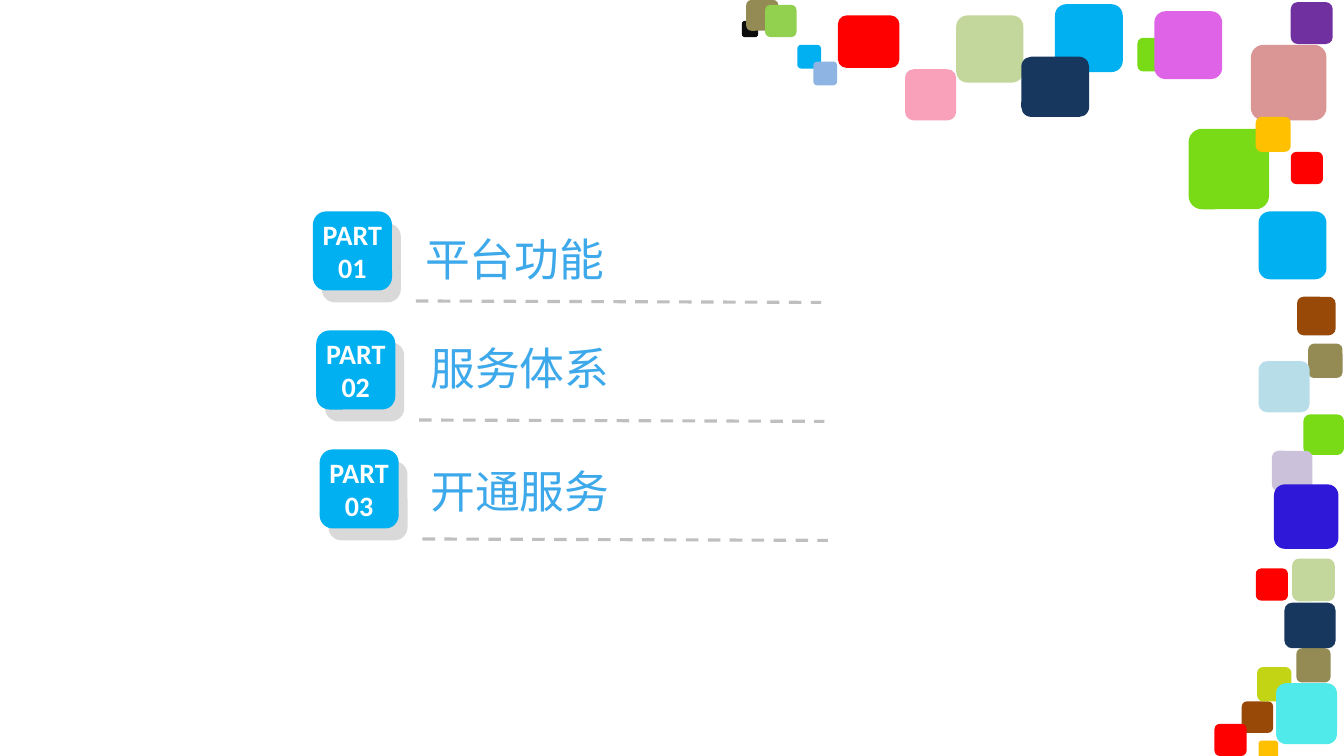
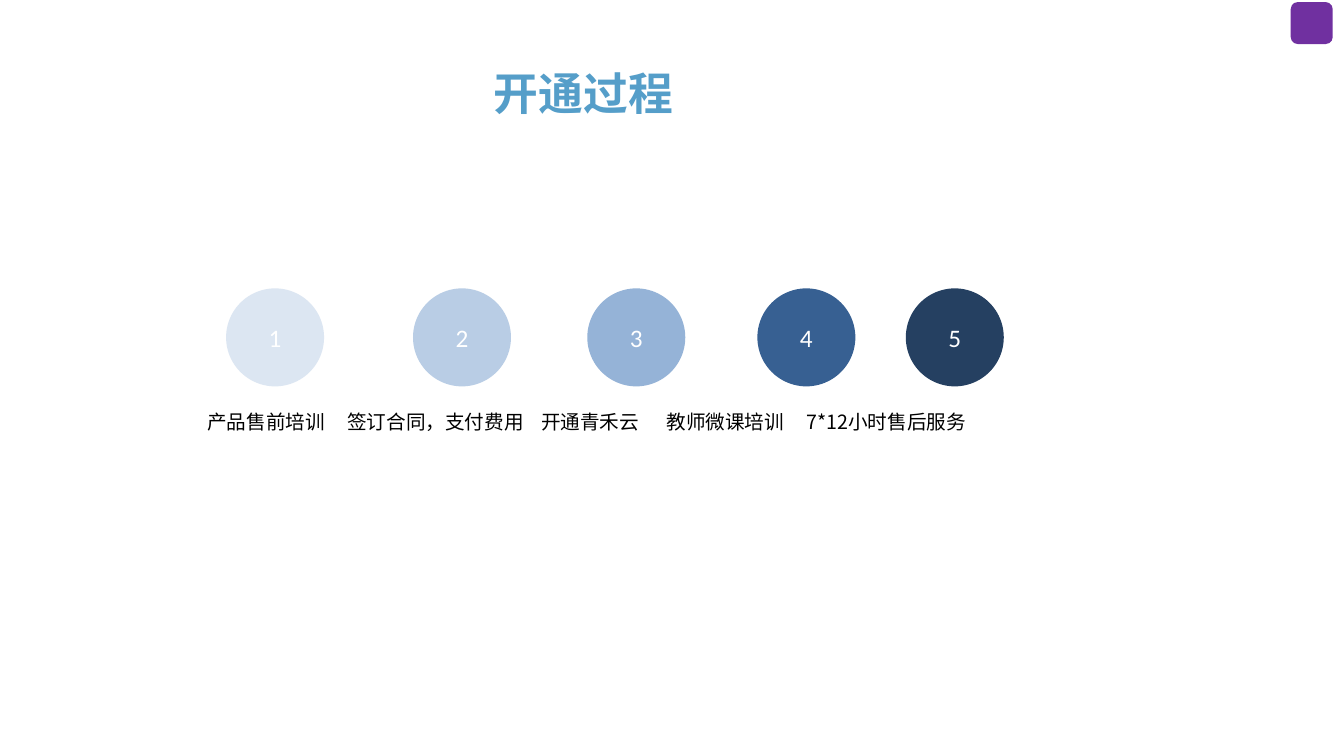
from lxml.etree import SubElement
from pptx import Presentation
from pptx.dml.color import RGBColor
from pptx.enum.dml import MSO_LINE
from pptx.enum.shapes import MSO_CONNECTOR, MSO_SHAPE
from pptx.enum.text import MSO_ANCHOR, MSO_AUTO_SIZE, PP_ALIGN
from pptx.oxml.ns import qn
from pptx.util import Pt

LATIN, HAN = "Calibri", "Noto Sans CJK SC"
COLORS = {
    "black": "000000", "ink": "0D0D0D", "white": "FFFFFF",
    "gray": "D9D9D9", "rule": "BFBFBF", "olive": "948A54",
    "sky": "00B0F0", "red": "FF0000", "mist": "8EB4E3",
    "sage": "C3D69B", "pink": "F9A1BA", "brown": "984807",
    "lime": "78DB15", "orchid": "DE63E7", "purple": "7030A0",
    "rose": "D99694", "green": "92D050", "navy": "17375E",
    "gold": "FFC000", "ice": "B7DEE8", "citron": "C2D414",
    "aqua": "50EAEA", "lilac": "CCC1DA", "blue": "2F18D8",
    "topic": "3DA9EB", "title": "559EC9",
    "step1": "DCE6F2", "step2": "B9CDE5", "step3": "95B3D7",
    "step4": "376092", "step5": "254061",
}


def add_tile(slide, left, top, width, height, color,
             kind=MSO_SHAPE.ROUNDED_RECTANGLE):
    tile = slide.shapes.add_shape(
        kind, Pt(left), Pt(top), Pt(width), Pt(height))
    tile.shadow.inherit = False
    tile.fill.solid()
    tile.fill.fore_color.rgb = RGBColor.from_string(COLORS[color])
    tile.line.fill.background()
    return tile


def set_text(frame, lines, face, size, color, bold=False,
             align=PP_ALIGN.LEFT, anchor=MSO_ANCHOR.TOP, inset=0):
    frame.text = "\n".join(lines)
    frame.auto_size = MSO_AUTO_SIZE.NONE
    frame.vertical_anchor = anchor
    frame.margin_left = frame.margin_right = Pt(inset)
    frame.margin_top = frame.margin_bottom = Pt(inset)
    for par in frame.paragraphs:
        par.alignment = align
        par.space_before = Pt(0)
        font = par.font
        font.name, font.size, font.bold = face, Pt(size), bold
        font.color.rgb = RGBColor.from_string(COLORS[color])
        props = par._p.get_or_add_pPr().get_or_add_defRPr()
        SubElement(props, qn("a:ea")).set("typeface", face)


deck = Presentation()
deck.slide_width, deck.slide_height = Pt(960), Pt(540)
agenda = deck.slides.add_slide(deck.slide_layouts[1])
process = deck.slides.add_slide(deck.slide_layouts[5])

# Shared corner tile
for slide in deck.slides:
    add_tile(slide, 922, 1.5, 30, 30, "purple")

# Agenda: mosaic border, from back to front
MOSAIC = [
    (530, 15, 11.5, 11.5, "ink"), (533, 0, 23, 22, "olive"),
    (569.5, 32, 17, 17, "sky"), (598.5, 11, 44, 37.5, "red"),
    (581, 44, 17, 17, "mist"), (683, 11, 48, 48, "sage"),
    (646.5, 49.5, 36.5, 36.5, "pink"), (926.5, 212, 27.5, 27.5, "brown"),
    (899, 151, 48.5, 48.5, "sky"), (753.5, 3, 48.5, 48.5, "sky"),
    (812.5, 27, 24, 24, "lime"), (824.5, 8, 48.5, 48.5, "orchid"),
    (893.5, 32, 54, 54, "rose"), (922, 108.5, 23, 23, "red"),
    (546.5, 3.5, 22.5, 23, "green"), (729.5, 40.5, 48.5, 43, "navy"),
    (849, 92, 57.5, 57.5, "lime"), (897, 83.5, 25, 25, "gold"),
    (934.5, 245.5, 24.5, 24.5, "olive"), (899, 258, 36.5, 36.5, "ice"),
    (931, 296, 29, 29, "lime"), (887, 501, 22.5, 22.5, "brown"),
    (867.5, 517, 23, 23, "red"), (899, 529, 14, 14, "gold"),
    (926, 463, 24.5, 24.5, "olive"), (898, 476.5, 24.5, 24.5, "citron"),
    (911.5, 488, 43.5, 43.5, "aqua"), (908.5, 322, 29, 29, "lilac"),
    (910, 346, 46, 46, "blue"), (923, 399, 30.5, 30.5, "sage"),
    (917.5, 430.5, 36.5, 32.5, "navy"), (897, 406, 23, 23, "red"),
]
for box in MOSAIC:
    add_tile(agenda, *box)

# Agenda: numbered tiles and dashed rules
for row in range(3):
    left, top = 223.5 + 2.4 * row, 151 + 85 * row
    add_tile(agenda, left + 6.3, top + 8.5, 56.5, 56.5, "gray")
    tile = add_tile(agenda, left, top, 56.5, 56.5, "sky")
    set_text(tile.text_frame, ["PART", f"{row + 1:02}"], LATIN, 20, "white",
             True, PP_ALIGN.CENTER, MSO_ANCHOR.MIDDLE)
    rule = agenda.shapes.add_connector(
        MSO_CONNECTOR.STRAIGHT, Pt(left + 73.5), Pt(top + 64),
        Pt(left + 363), Pt(top + 65))
    rule.line.color.rgb = RGBColor.from_string(COLORS["rule"])
    rule.line.width = Pt(2.25)
    rule.line.dash_style = MSO_LINE.DASH
    SubElement(rule._element.spPr, qn("a:effectLst"))

# Agenda: topics
heading, topics = agenda.placeholders
heading._element.getparent().remove(heading._element)
topics.left, topics.top = Pt(296.5), Pt(162)
topics.width, topics.height = Pt(290), Pt(236)
set_text(topics.text_frame, ["平台功能", "服务体系", "开通服务"],
         HAN, 32, "topic", inset=3.6)
topics.text_frame.margin_left = Pt(7.2)
for par, gap, indent in zip(topics.text_frame.paragraphs,
                            (0, 39, 49.5), (0, 3.6, 3.6)):
    par.space_before = Pt(gap)
    props = par._p.get_or_add_pPr()
    props.set("marL", str(Pt(indent)))
    props.set("indent", "0")
    props.insert_element_before(
        props.makeelement(qn("a:buNone")), "a:tabLst", "a:defRPr")

# Process: title
title = process.shapes.title
title.left, title.top = Pt(345.5), Pt(43)
title.width, title.height = Pt(336), Pt(54)
set_text(title.text_frame, ["开通过程"], HAN, 32, "title", True, inset=3.6)
title.text_frame.margin_left = Pt(7.2)

# Process: numbered circles and their labels
STEPS = [
    (161.5, 148, "产品售前培训"), (295, 248, "签订合同，支付费用"),
    (419.5, 386.5, "开通青禾云"), (541, 476, "教师微课培训"),
    (647, 576, "7*12小时售后服务"),
]
for num, (left, start, name) in enumerate(STEPS, 1):
    disc = add_tile(process, left, 206, 70, 70, f"step{num}", MSO_SHAPE.OVAL)
    set_text(disc.text_frame, [str(num)], LATIN, 18, "white",
             align=PP_ALIGN.CENTER, anchor=MSO_ANCHOR.MIDDLE)
    label = process.shapes.add_textbox(Pt(start), Pt(293), Pt(135), Pt(22))
    label.text_frame.word_wrap = True
    set_text(label.text_frame, [name], HAN, 14, "black")

deck.save("out.pptx")
